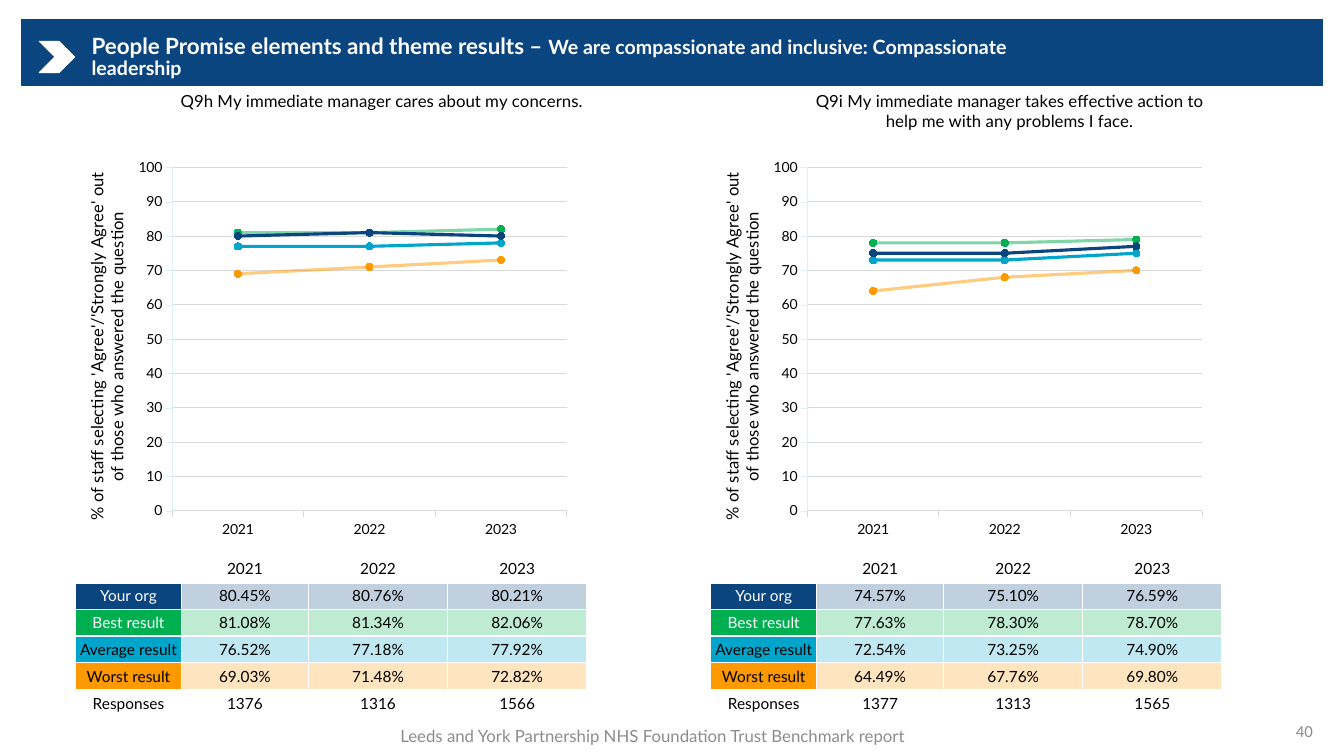
"""Builds the compassionate leadership results slide."""
import pptx
import pptx.chart.data
import pptx.dml.color
import pptx.enum.chart
import pptx.enum.shapes
import pptx.enum.text
import pptx.oxml
import pptx.oxml.ns
import pptx.util
from pptx.util import Inches

NAVY, GREEN, BLUE, ORANGE = "0B457F", "00B050", "00A5CC", "FF9900"
WHITE, BLACK, GREY = "FFFFFF", "000000", "8C8C8C"
YEARS = ["2021", "2022", "2023"]
ROW_STYLES = {
    "Your org": (NAVY, WHITE),
    "Best result": (GREEN, WHITE),
    "Average result": (BLUE, BLACK),
    "Worst result": (ORANGE, BLACK),
}
SERIES_OPACITY = {"Average result": 100, "Best result": 50, "Worst result": 50, "Your org": 100}
AXIS_TITLE = "% of staff selecting 'Agree'/'Strongly Agree' out of those who answered the question"
QUESTIONS = [
    {
        "title": "Q9h My immediate manager cares about my concerns.",
        "results": {
            "Your org": [80.45, 80.76, 80.21],
            "Best result": [81.08, 81.34, 82.06],
            "Average result": [76.52, 77.18, 77.92],
            "Worst result": [69.03, 71.48, 72.82],
        },
        "responses": [1376, 1316, 1566],
    },
    {
        "title": "Q9i My immediate manager takes effective action to help me with any problems I face.",
        "results": {
            "Your org": [74.57, 75.10, 76.59],
            "Best result": [77.63, 78.30, 78.70],
            "Average result": [72.54, 73.25, 74.90],
            "Worst result": [64.49, 67.76, 69.80],
        },
        "responses": [1377, 1313, 1565],
    },
]
ALIGN = pptx.enum.text.PP_ALIGN
MIDDLE = pptx.enum.text.MSO_ANCHOR.MIDDLE
SHAPE = pptx.enum.shapes.MSO_SHAPE
qn = pptx.oxml.ns.qn


def rgb(code):
    """Return the colour for a hex string."""
    return pptx.dml.color.RGBColor.from_string(code)


def set_font(font, size, color=BLACK, bold=False, name="Lato"):
    """Set the typeface, size, colour and weight of a font."""
    font.name, font.size, font.bold = name, pptx.util.Pt(size), bold
    font.color.rgb = rgb(color)


def add_span(para, text, size, color=BLACK, bold=False, name="Lato"):
    """Add one formatted run to a paragraph."""
    span = para.add_run()
    span.text = text
    set_font(span.font, size, color, bold, name)


def set_fill(fill, color, opacity=100):
    """Apply a solid fill with an opacity in percent."""
    fill.solid()
    fill.fore_color.rgb = rgb(color)
    if opacity < 100:
        alpha = pptx.oxml.parse_xml(
            f'<a:alpha {pptx.oxml.ns.nsdecls("a")} val="{opacity * 1000}"/>')
        fill.fore_color._xFill.find(qn("a:srgbClr")).append(alpha)


def add_block(page, kind, left, top, width, height, color):
    """Add a plain filled shape."""
    block = page.shapes.add_shape(
        kind, Inches(left), Inches(top), Inches(width), Inches(height))
    block.shadow.inherit = False
    set_fill(block.fill, color)
    block.line.color.rgb = rgb(color)
    block.line.width = pptx.util.Pt(0.75)


def add_text(page, left, top, width, height, align):
    """Add a wrapping text box and return its paragraph."""
    box = page.shapes.add_textbox(Inches(left), Inches(top), Inches(width), Inches(height))
    box.text_frame.word_wrap = True
    box.text_frame.vertical_anchor = MIDDLE
    para = box.text_frame.paragraphs[0]
    para.alignment = align
    return para


def place(element, index, target, **fractions):
    """Give a chart part a manual layout in fractions of the chart."""
    for layout in element.findall(qn("c:layout")):
        element.remove(layout)
    inner = f'<c:layoutTarget val="{target}"/>' if target else ""
    modes = "".join(f'<c:{key}Mode val="edge"/>' for key in ("x", "y"))
    values = "".join(f'<c:{key} val="{value}"/>' for key, value in fractions.items())
    element.insert(index, pptx.oxml.parse_xml(
        f'<c:layout {pptx.oxml.ns.nsdecls("c")}><c:manualLayout>'
        f'{inner}{modes}{values}</c:manualLayout></c:layout>'))


def add_chart_title(title, text, x, y):
    """Write a chart or axis title at a fixed place."""
    add_span(title.text_frame.paragraphs[0], text, 12)
    place(title.element, 1, None, x=x, y=y)


def style_axis(axis, color, width):
    """Format the line and labels of an axis."""
    axis.major_tick_mark = pptx.enum.chart.XL_TICK_MARK.OUTSIDE
    axis.minor_tick_mark = pptx.enum.chart.XL_TICK_MARK.NONE
    axis.format.line.color.rgb = rgb(color)
    axis.format.line.width = pptx.util.Pt(width)
    set_font(axis.tick_labels.font, 10)


def style_series(series):
    """Format the line and markers of one result series."""
    color = ROW_STYLES[series.name][0]
    series.smooth = False
    series.format.line.width = pptx.util.Pt(2.25)
    set_fill(series.format.line.fill, color, SERIES_OPACITY[series.name])
    series.marker.style = pptx.enum.chart.XL_MARKER_STYLE.CIRCLE
    series.marker.size = 5
    set_fill(series.marker.format.fill, color)
    series.marker.format.line.color.rgb = rgb(color)


def add_results_chart(page, left, question):
    """Add the line chart of a question."""
    data = pptx.chart.data.CategoryChartData()
    data.categories = YEARS
    for label in SERIES_OPACITY:
        data.add_series(label, [round(value) for value in question["results"][label]])
    chart = page.shapes.add_chart(
        pptx.enum.chart.XL_CHART_TYPE.LINE_MARKERS,
        Inches(left), Inches(0.81), Inches(5.29), Inches(4.52), data).chart
    set_font(chart.font, 10)
    chart.has_legend = False
    chart.has_title = True
    add_chart_title(chart.chart_title, question["title"], 0.21, 0.01)
    style_axis(chart.category_axis, "D9D9D9", 0.75)
    scale = chart.value_axis
    style_axis(scale, "DBEFF9", 0.25)
    scale.minimum_scale, scale.maximum_scale, scale.major_unit = 0, 100, 10
    scale.major_gridlines.format.line.color.rgb = rgb("D9D9D9")
    scale.major_gridlines.format.line.width = pptx.util.Pt(0.75)
    scale.has_title = True
    add_chart_title(scale.axis_title, AXIS_TITLE, 0.03, 0.2)
    place(chart.element.find(".//" + qn("c:plotArea")), 0, "inner", x=0.2, y=0.19, w=0.74, h=0.76)
    chart.plots[0].vary_by_categories = False
    for series in chart.plots[0].series:
        style_series(series)


def set_borders(cell, bottom):
    """Draw white cell borders with a given bottom width."""
    widths = {"lnL": 1, "lnR": 1, "lnT": 1, "lnB": bottom}
    for index, (side, width) in enumerate(widths.items()):
        cell._tc.get_or_add_tcPr().insert(index, pptx.oxml.parse_xml(
            f'<a:{side} {pptx.oxml.ns.nsdecls("a")} w="{pptx.util.Pt(width)}">'
            f'<a:solidFill><a:srgbClr val="{WHITE}"/></a:solidFill></a:{side}>'))


def fill_cell(cell, text, color, fill, opacity, bottom):
    """Write and format one table cell."""
    cell.margin_left = cell.margin_right = cell.margin_top = cell.margin_bottom = 0
    cell.vertical_anchor = MIDDLE
    para = cell.text_frame.paragraphs[0]
    para.alignment = ALIGN.CENTER
    set_font(para.font, 11, color)
    if text:
        add_span(para, text, 11, color)
    if fill:
        set_fill(cell.fill, fill, opacity)
    else:
        cell.fill.background()
    set_borders(cell, bottom)


def add_results_table(page, left, question):
    """Add the table of yearly results and response counts."""
    rows = [["", *YEARS]]
    rows += [[label, *(f"{value:.2f}%" for value in question["results"][label])]
             for label in ROW_STYLES]
    rows.append(["Responses", *map(str, question["responses"])])
    table = page.shapes.add_table(
        len(rows), 4, Inches(left), Inches(5.51), Inches(5.07), Inches(1.6)).table
    table.first_row = table.horz_banding = False
    for column, width in zip(table.columns, (1.05, 1.26, 1.38, 1.38)):
        column.width = Inches(width)
    for r, row in enumerate(rows):
        fill, label_color = ROW_STYLES.get(row[0], (None, BLACK))
        for c, text in enumerate(row):
            color, opacity = (BLACK, 25) if c else (label_color, 100)
            fill_cell(table.cell(r, c), text, color, fill, opacity, 1 if r else 3)


def main():
    """Build and save the slide."""
    deck = pptx.Presentation()
    deck.slide_width, deck.slide_height = Inches(13.33), Inches(7.5)
    page = deck.slides.add_slide(deck.slide_layouts[6])
    add_block(page, SHAPE.RECTANGLE, 0.21, 0.19, 12.91, 0.66, NAVY)
    add_block(page, SHAPE.CHEVRON, 0.39, 0.41, 0.35, 0.31, WHITE)
    heading = add_text(page, 0.81, 0.35, 9.61, 0.44, ALIGN.LEFT)
    heading.line_spacing = 0.9
    add_span(heading, "People Promise elements and theme results – ", 16, WHITE, True)
    add_span(heading, "We are compassionate and inclusive: Compassionate leadership", 14, WHITE, True)
    for index, question in enumerate(QUESTIONS):
        left = 0.65 + 6.3 * index
        add_results_chart(page, left, question)
        add_results_table(page, left + 0.1, question)
    add_span(add_text(page, 10.12, 7.05, 3, 0.4, ALIGN.RIGHT), "40", 12, GREY, name="Calibri")
    footer = add_text(page, 2.95, 7.1, 7.05, 0.39, ALIGN.CENTER)
    add_span(footer, "Leeds and York Partnership NHS Foundation Trust Benchmark report", 12, GREY)
    deck.save("out.pptx")


if __name__ == "__main__":
    main()
